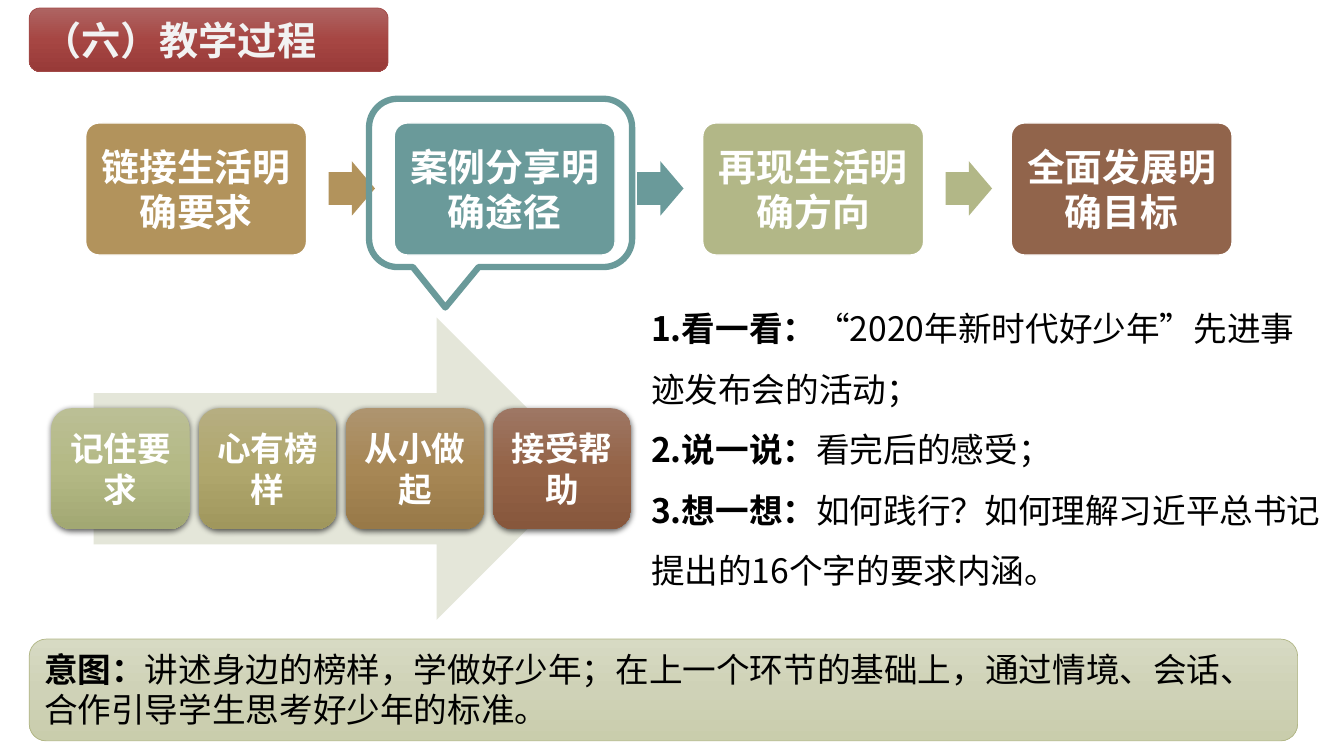
from dataclasses import dataclass

from lxml import etree
from copy import deepcopy
from pptx import Presentation
from pptx import util as u
from pptx.dml.color import RGBColor
from pptx.enum import shapes, text
from pptx.oxml.ns import qn

FONT = "Noto Sans CJK SC"
BLACK = RGBColor(0x00, 0x00, 0x00)
WHITE = RGBColor(0xFF, 0xFF, 0xFF)
OFF_WHITE = RGBColor(0xF2, 0xF2, 0xF2)
OCHRE = RGBColor(0xB2, 0x93, 0x5C)
TEAL = RGBColor(0x6A, 0x9A, 0x9A)
SAGE = RGBColor(0xB2, 0xB7, 0x87)
BROWN = RGBColor(0x91, 0x64, 0x4B)
PALE_SAGE = RGBColor(0xE4, 0xE6, 0xD9)
TITLE_EDGE = RGBColor(0xA2, 0x4A, 0x48)

Gradient = tuple[RGBColor, RGBColor, RGBColor]
Box = tuple[float, float, float, float]


def gradient(*codes: str) -> Gradient:
    return tuple(RGBColor.from_string(code) for code in codes)


TITLE_RED = gradient("AE6462", "A64643", "983A38")
INTENT_SAGE = gradient("D7DAC3", "CFD2B7", "C9CDAC")


@dataclass
class Stage:
    label: str
    color: RGBColor


@dataclass
class Step:
    label: str
    colors: Gradient


STAGES = [
    Stage("链接生活明确要求", OCHRE),
    Stage("案例分享明确途径", TEAL),
    Stage("再现生活明确方向", SAGE),
    Stage("全面发展明确目标", BROWN),
]
STEPS = [
    Step("记住要求", gradient("BBBF95", "B4B985", "A2A873")),
    Step("心有榜样", gradient("B6AE81", "B0A76D", "A0975D")),
    Step("从小做起", gradient("AE946F", "A78755", "987948")),
    Step("接受帮助", gradient("9E7764", "946347", "87573C")),
]
# Each paragraph is a bold lead followed by plain text
ACTIVITIES = [
    ("1.看一看：", "“2020年新时代好少年”先进事迹发布会的活动；"),
    ("2.说一说：", "看完后的感受；"),
    ("3.想一想：", "如何践行？如何理解习近平总书记提出的16个字的要求内涵。"),
]
INTENT = [("意图：", "讲述身边的榜样，学做好少年；在上一个环节的基础上，"
           "通过情境、会话、合作引导学生思考好少年的标准。")]


def write(shape, paragraphs: list[tuple[str, ...]], *, size: float,
          color: RGBColor = BLACK, align=text.PP_ALIGN.LEFT,
          anchor=text.MSO_ANCHOR.TOP, inset: float | None = None,
          spacing: float | None = None) -> None:
    frame = shape.text_frame
    frame.word_wrap = True
    frame.vertical_anchor = anchor
    if inset is not None:
        frame.margin_left = frame.margin_right = u.Inches(inset)
        frame.margin_top = frame.margin_bottom = u.Inches(inset)
    for index, parts in enumerate(paragraphs):
        paragraph = frame.add_paragraph() if index else frame.paragraphs[0]
        paragraph.alignment = align
        if spacing:
            paragraph.line_spacing = spacing
        for position, part in enumerate(parts):
            run = paragraph.add_run()
            run.text = part
            run.font.size = u.Pt(size)
            run.font.bold = position == 0
            run.font.name = FONT
            run.font.color.rgb = color
            east_asian = etree.SubElement(run.font._element, qn("a:ea"))
            east_asian.set("typeface", FONT)


def paint_gradient(shape, colors: Gradient) -> None:
    shape.fill.gradient()
    shape.fill.gradient_angle = 270
    stop_list = shape._element.spPr.find(".//" + qn("a:gsLst"))
    stop_list.append(deepcopy(stop_list[-1]))
    for stop, color, position in zip(shape.fill.gradient_stops, colors, (0, 0.5, 1)):
        stop.color.rgb = color
        stop.position = position


def add_block(slide, kind, box: Box, *, fill: RGBColor | Gradient | None = None,
              line: RGBColor | None = None, width: float = 1,
              adjust: tuple[float, ...] = ()):
    block = slide.shapes.add_shape(kind, *map(u.Inches, box))
    for index, value in enumerate(adjust):
        block.adjustments[index] = value
    if fill is None:
        block.fill.background()
    elif isinstance(fill, RGBColor):
        block.fill.solid()
        block.fill.fore_color.rgb = fill
    else:
        paint_gradient(block, fill)
    if line is None:
        block.line.fill.background()
    else:
        block.line.color.rgb = line
        block.line.width = u.Pt(width)
    block.shadow.inherit = False
    return block


def add_drop_shadow(shape) -> None:
    effects = shape._element.spPr.find(qn("a:effectLst"))
    shadow = etree.SubElement(effects, qn("a:outerShdw"), blurRad=str(u.Pt(4.5)),
                              dist=str(u.Pt(1.5)), dir="5400000", rotWithShape="0")
    black = etree.SubElement(shadow, qn("a:srgbClr"), val="000000")
    etree.SubElement(black, qn("a:alpha"), val="63000")


def add_stages(slide) -> None:
    for index, stage in enumerate(STAGES):
        left = 0.85 + 3.06 * index
        card = add_block(slide, shapes.MSO_SHAPE.ROUNDED_RECTANGLE,
                         (left, 1.22, 2.19, 1.31), fill=stage.color,
                         line=WHITE, adjust=(0.1,))
        write(card, [(stage.label,)], size=27, color=WHITE, inset=0.11,
              align=text.PP_ALIGN.CENTER, anchor=text.MSO_ANCHOR.MIDDLE)
        if index < len(STAGES) - 1:
            add_block(slide, shapes.MSO_SHAPE.RIGHT_ARROW,
                      (left + 2.41, 1.6, 0.46, 0.54), fill=stage.color,
                      adjust=(0.6, 0.5))


def add_steps(slide) -> None:
    add_block(slide, shapes.MSO_SHAPE.RIGHT_ARROW, (0.93, 3.15, 4.9, 3), fill=PALE_SAGE)
    for index, step in enumerate(STEPS):
        tile = add_block(slide, shapes.MSO_SHAPE.ROUNDED_RECTANGLE,
                         (0.51 + 1.46 * index, 4.05, 1.37, 1.2), fill=step.colors)
        add_drop_shadow(tile)
        write(tile, [(step.label,)], size=24, color=WHITE, inset=0.1,
              align=text.PP_ALIGN.CENTER, anchor=text.MSO_ANCHOR.MIDDLE)


def main() -> None:
    deck = Presentation()
    deck.slide_width, deck.slide_height = u.Inches(13.33), u.Inches(7.5)
    slide = deck.slides.add_slide(deck.slide_layouts[6])

    # Row of lesson stages
    add_stages(slide)

    # Intent of this stage and slide title
    intent = add_block(slide, shapes.MSO_SHAPE.ROUNDED_RECTANGLE,
                       (0.29, 6.34, 12.58, 1.01), fill=INTENT_SAGE, line=SAGE, width=0.5)
    write(intent, INTENT, size=24)
    title = add_block(slide, shapes.MSO_SHAPE.ROUNDED_RECTANGLE,
                      (0.29, 0.08, 3.56, 0.63), fill=TITLE_RED, line=TITLE_EDGE, width=0.5)
    write(title, [("（六）教学过程",)], size=28, color=OFF_WHITE)

    # Classroom activities
    activities = slide.shapes.add_textbox(*map(u.Inches, (6.36, 2.81, 6.88, 3.04)))
    write(activities, ACTIVITIES, size=24, spacing=1.5)

    # Callout around the current stage, and its four steps
    add_block(slide, shapes.MSO_SHAPE.ROUNDED_RECTANGULAR_CALLOUT,
              (3.66, 0.98, 2.61, 1.67), line=TEAL, width=4.5,
              adjust=(-0.21, 0.74, 0.17))
    add_steps(slide)

    deck.save("out.pptx")


if __name__ == "__main__":
    main()
